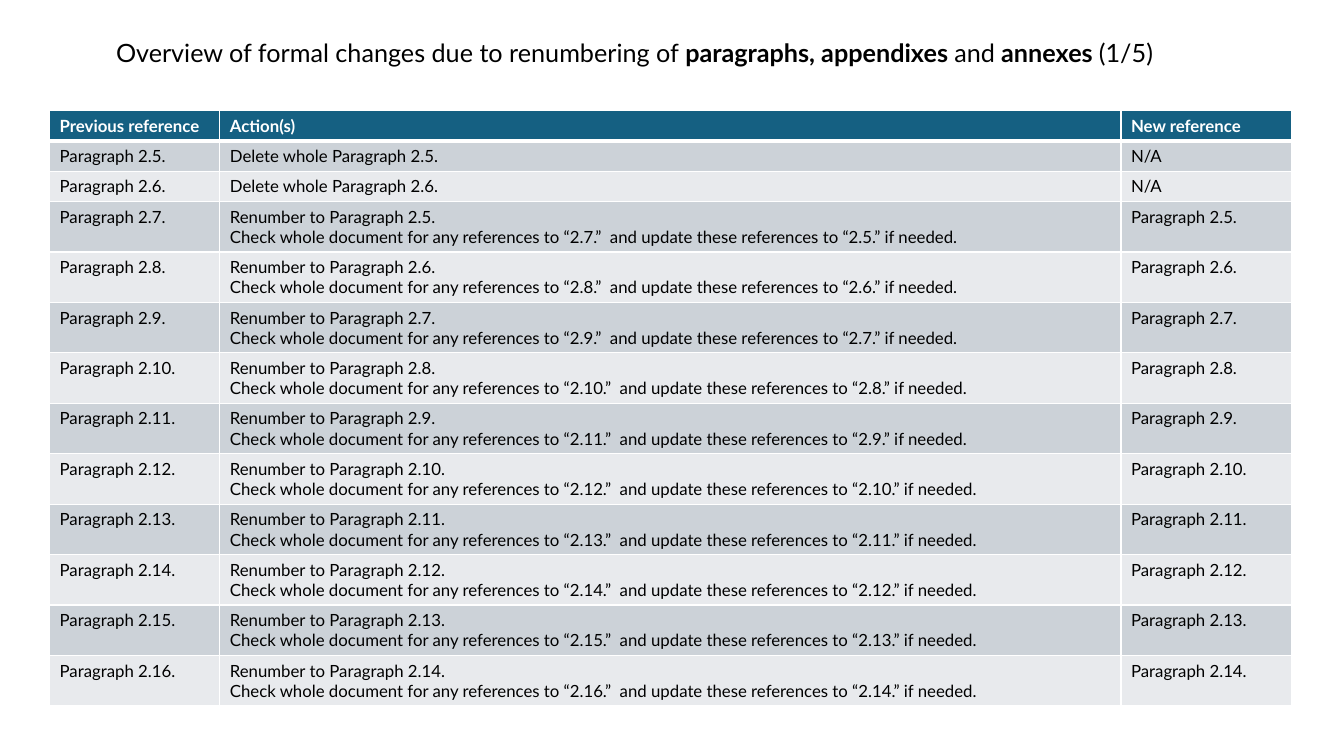
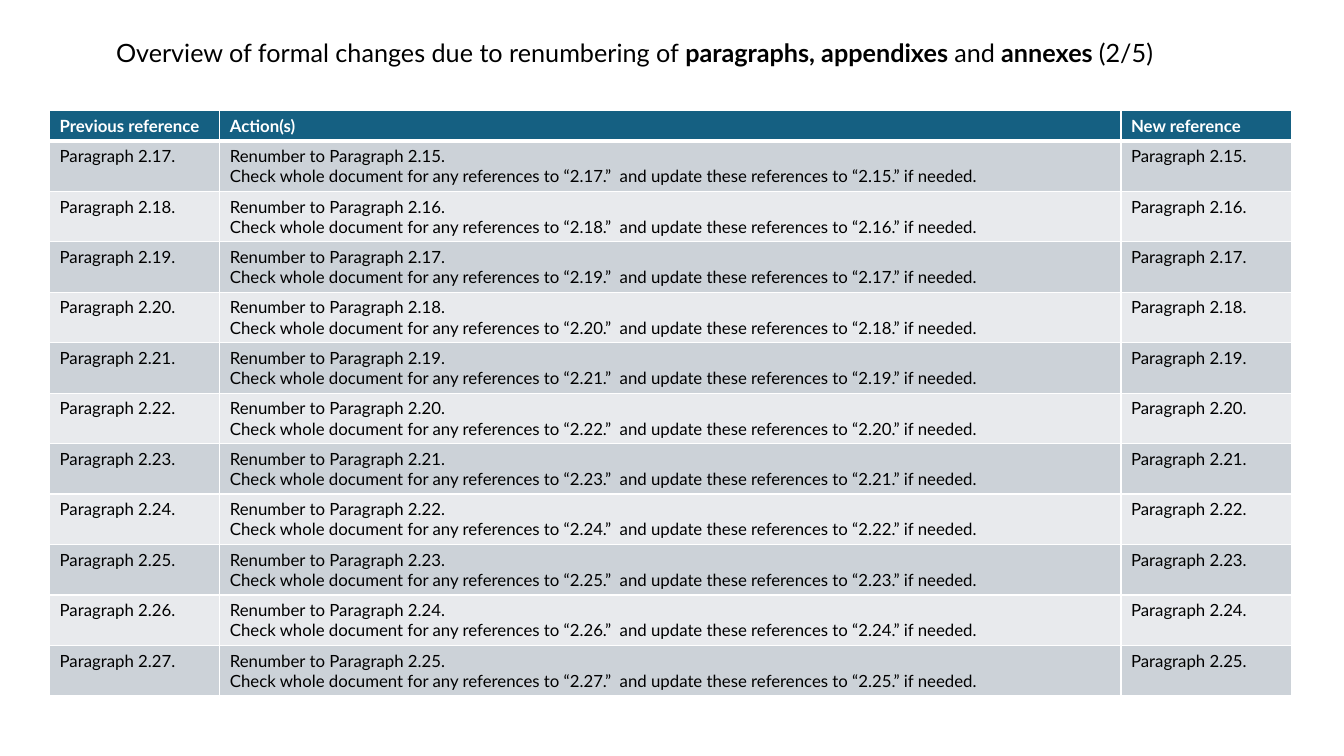
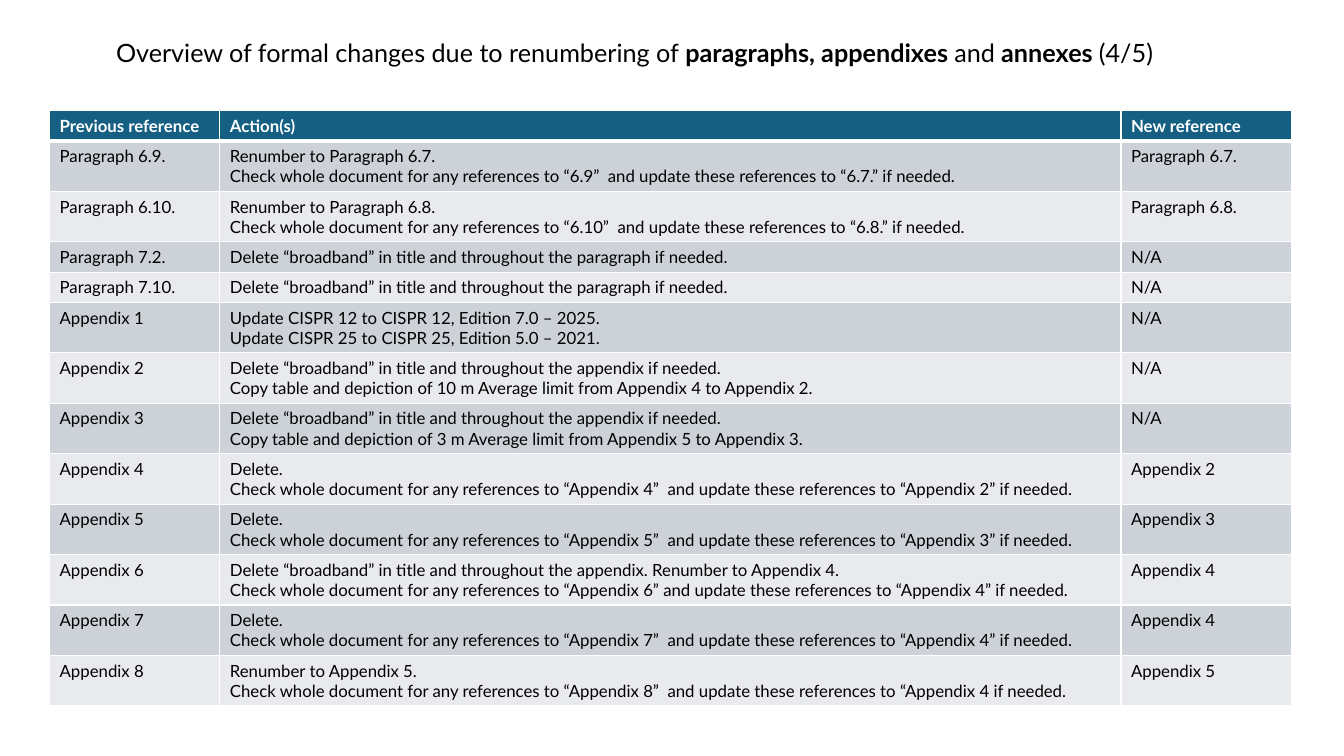
from dataclasses import dataclass

from lxml.etree import SubElement
from pptx import Presentation
from pptx.dml.color import RGBColor
from pptx.enum.text import MSO_ANCHOR, MSO_AUTO_SIZE, PP_ALIGN
from pptx.oxml.ns import qn
from pptx.util import Cm, Pt

CHECK = ("Check whole document for any references to “{}”  "
         "and update these references to “{}” if needed.")
BROAD = "Delete “broadband” in title and throughout the {} if needed."


def renum(n):
    old, new = f"2.{n}.", f"2.{n - 2}."
    return (f"Paragraph {old}",
            [f"Renumber to Paragraph {new}", CHECK.format(old, new)],
            f"Paragraph {new}")


def drop(old, new):
    return old, ["Delete.", CHECK.format(old, new)], new


TITLE = [
    ("Overview of formal changes due to renumbering of ", False),
    ("paragraphs, appendixes ", True),
    ("and", False),
    (" annexes ", True),
]
HEAD = ("Previous reference", ["Action(s)"], "New reference")
PAGES = [
    ("(1/5)", [
        ("Paragraph 2.5.", ["Delete whole Paragraph 2.5."], "N/A"),
        ("Paragraph 2.6.", ["Delete whole Paragraph 2.6."], "N/A"),
        *map(renum, range(7, 17)),
    ]),
    ("(2/5)", [*map(renum, range(17, 28))]),
    ("(4/5)", [
        ("Paragraph 6.9.",
         ["Renumber to Paragraph 6.7.", CHECK.format("6.9", "6.7.")],
         "Paragraph 6.7."),
        ("Paragraph 6.10.",
         ["Renumber to Paragraph 6.8.", CHECK.format("6.10", "6.8.")],
         "Paragraph 6.8."),
        ("Paragraph 7.2.", [BROAD.format("paragraph")], "N/A"),
        ("Paragraph 7.10.", [BROAD.format("paragraph")], "N/A"),
        ("Appendix 1",
         ["Update CISPR 12 to CISPR 12, Edition 7.0 – 2025.",
          "Update CISPR 25 to CISPR 25, Edition 5.0 – 2021."], "N/A"),
        ("Appendix 2",
         [BROAD.format("appendix"),
          "Copy table and depiction of 10 m Average limit from Appendix 4 to Appendix 2."],
         "N/A"),
        ("Appendix 3",
         [BROAD.format("appendix"),
          "Copy table and depiction of 3 m Average limit from Appendix 5 to Appendix 3."],
         "N/A"),
        drop("Appendix 4", "Appendix 2"),
        drop("Appendix 5", "Appendix 3"),
        ("Appendix 6",
         ["Delete “broadband” in title and throughout the appendix. Renumber to Appendix 4.",
          "Check whole document for any references to “Appendix 6” "
          "and update these references to “Appendix 4” if needed."],
         "Appendix 4"),
        drop("Appendix 7", "Appendix 4"),
        ("Appendix 8",
         ["Renumber to Appendix 5.",
          "Check whole document for any references to “Appendix 8”  "
          "and update these references to “Appendix 4 if needed."],
         "Appendix 5"),
    ]),
]


@dataclass(frozen=True)
class Theme:
    font: str = "Lato"
    title: int = 18
    body: int = 12
    ink: str = "000000"
    white: str = "FFFFFF"
    head: str = "156082"
    bands: tuple = ("CCD2D8", "E8EAED")
    thin: int = 1
    thick: int = 3


LOOK = Theme()
SIZE = {"slide_width": Cm(33.87), "slide_height": Cm(19.05)}
PLACE = {"left": Cm(2.67), "top": Cm(0.81), "width": Cm(28.7), "height": Cm(1.02)}
FRAME = {"word_wrap": True, "vertical_anchor": MSO_ANCHOR.TOP,
         "auto_size": MSO_AUTO_SIZE.SHAPE_TO_FIT_TEXT}
COLS = [Cm(4.29), Cm(22.71), Cm(4.29)]
LEFT, TOP = Cm(1.25), Cm(2.79)
PAD, LINE = Cm(0.25), Cm(0.51)


def apply(item, form):
    for key, value in form.items():
        setattr(item, key, value)


def write(para, text, size, color, bold):
    run = para.add_run()
    run.text = text
    apply(run.font, {"name": LOOK.font, "size": Pt(size), "bold": bold})
    run.font.color.rgb = RGBColor.from_string(color)


def edge(cell, sides):
    props = cell._tc.get_or_add_tcPr()
    for spot, (side, width) in enumerate(sides.items()):
        line = SubElement(props, qn(f"a:ln{side}"), w=str(Pt(width)))
        fill = SubElement(line, qn("a:solidFill"))
        SubElement(fill, qn("a:srgbClr"), val=LOOK.white)
        props.insert(spot, line)


def add_title(slide, page):
    title = slide.shapes.title
    apply(title, PLACE)
    apply(title.text_frame, FRAME)
    para = title.text_frame.paragraphs[0]
    para.alignment = PP_ALIGN.LEFT
    for text, bold in [*TITLE, (page, False)]:
        write(para, text, LOOK.title, LOOK.ink, bold)


def fill_cell(cell, lines, row):
    top = row == 0
    cell.fill.solid()
    shade = LOOK.head if top else LOOK.bands[(row - 1) % 2]
    cell.fill.fore_color.rgb = RGBColor.from_string(shade)
    edge(cell, {"L": LOOK.thin, "R": LOOK.thin,
                "T": LOOK.thick if row == 1 else LOOK.thin,
                "B": LOOK.thick if top else LOOK.thin})
    frame = cell.text_frame
    for spot, text in enumerate(lines):
        para = frame.add_paragraph() if spot else frame.paragraphs[0]
        write(para, text, LOOK.body, LOOK.white if top else LOOK.ink, top)


def add_grid(slide, rows):
    tall = [PAD + LINE * len(acts) for _, acts, _ in rows]
    grid = slide.shapes.add_table(
        len(rows), len(COLS), LEFT, TOP, sum(COLS), sum(tall)).table
    for col, width in zip(grid.columns, COLS):
        col.width = width
    for spot, (old, acts, new) in enumerate(rows):
        grid.rows[spot].height = tall[spot]
        for cell, lines in zip(grid.rows[spot].cells, ([old], acts, [new])):
            fill_cell(cell, lines, spot)


def main():
    deck = Presentation()
    apply(deck, SIZE)
    for page, rows in PAGES:
        slide = deck.slides.add_slide(deck.slide_layouts[5])
        add_title(slide, page)
        add_grid(slide, [HEAD, *rows])
    deck.save("out.pptx")


if __name__ == "__main__":
    main()
